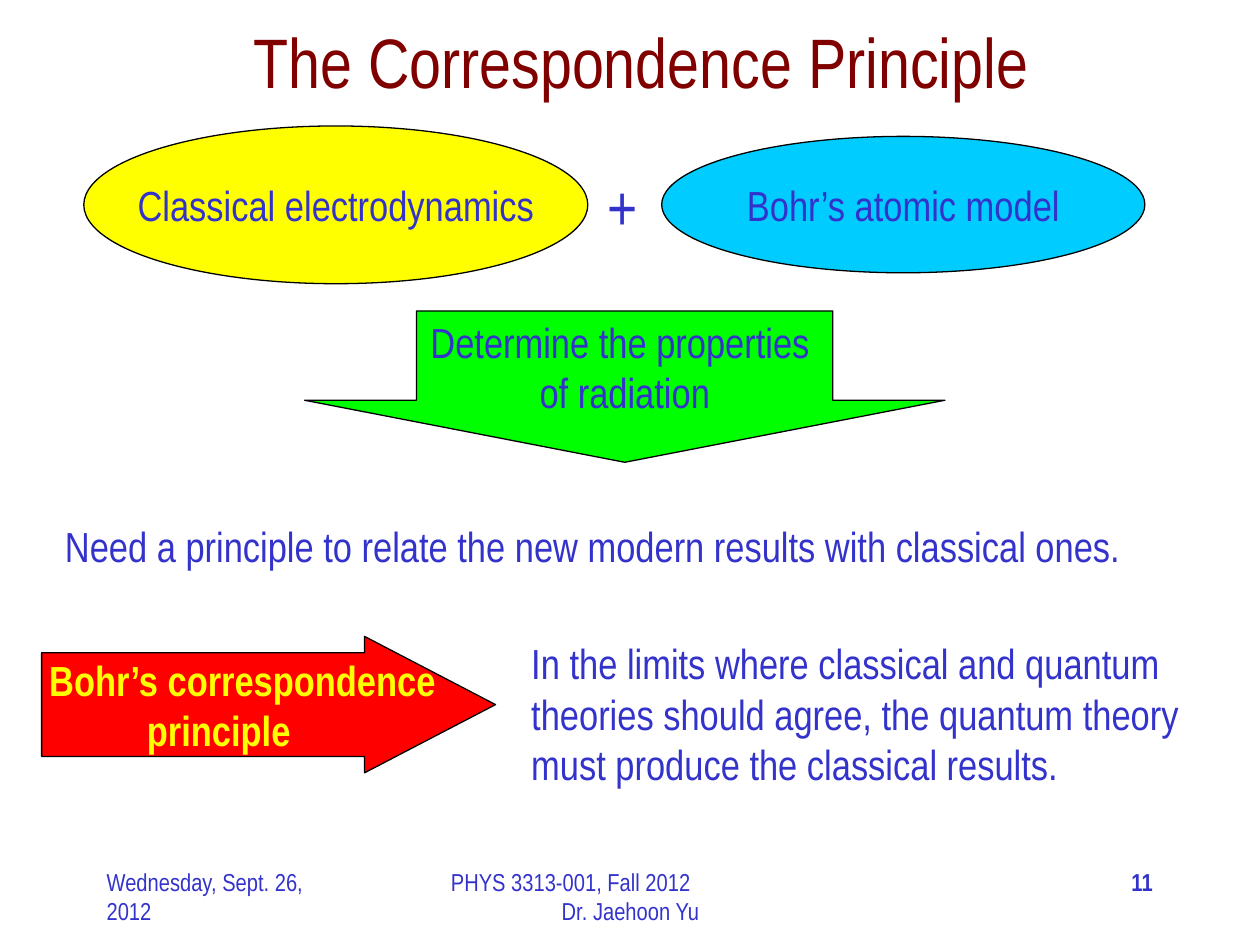
from dataclasses import dataclass

from pptx import Presentation
from pptx import util as u
from pptx.dml.color import RGBColor
from pptx.enum import shapes, text

FONT = "Arial Narrow"
BLUE, MAROON, YELLOW, BLACK = "3333CC", "800000", "FFFF00", "000000"
LEFT, CENTER, RIGHT = text.PP_ALIGN.LEFT, text.PP_ALIGN.CENTER, text.PP_ALIGN.RIGHT
TOP, MIDDLE = text.MSO_ANCHOR.TOP, text.MSO_ANCHOR.MIDDLE
SHAPE = shapes.MSO_SHAPE


@dataclass
class Line:
    words: str
    align: text.PP_ALIGN = LEFT
    indent: float = 0


@dataclass
class Style:
    size: float = 24
    color: str = BLUE
    bold: bool = False
    anchor: text.MSO_ANCHOR = TOP
    wrap: bool = True


@dataclass
class Box:
    """Position and size in centimetres."""
    left: float
    top: float
    width: float
    height: float

    def lengths(self) -> list[u.Length]:
        return [u.Cm(n) for n in (self.left, self.top, self.width, self.height)]


@dataclass
class Figure:
    kind: shapes.MSO_SHAPE
    box: Box
    fill: str
    lines: list[Line]
    style: Style
    adjustments: tuple[float, ...] = ()


@dataclass
class Note:
    box: Box
    lines: list[Line]
    style: Style


def rgb(value: str) -> RGBColor:
    return RGBColor.from_string(value)


def write(frame, lines: list[Line], style: Style) -> None:
    frame.auto_size = text.MSO_AUTO_SIZE.NONE
    frame.word_wrap = style.wrap
    frame.vertical_anchor = style.anchor
    frame.text = "\n".join(line.words for line in lines)
    for paragraph, line in zip(frame.paragraphs, lines):
        paragraph.alignment = line.align
        if line.indent:
            paragraph._p.get_or_add_pPr().set("marL", str(u.Cm(line.indent)))
        for run in paragraph.runs:
            run.font.name = FONT
            run.font.size = u.Pt(style.size)
            run.font.bold = style.bold
            run.font.color.rgb = rgb(style.color)


def draw_figure(slide, figure: Figure) -> None:
    shape = slide.shapes.add_shape(figure.kind, *figure.box.lengths())
    shape.shadow.inherit = False
    for index, value in enumerate(figure.adjustments):
        shape.adjustments[index] = value
    shape.fill.solid()
    shape.fill.fore_color.rgb = rgb(figure.fill)
    shape.line.color.rgb = rgb(BLACK)
    shape.line.width = u.Pt(0.75)
    write(shape.text_frame, figure.lines, figure.style)


def draw_note(slide, note: Note) -> None:
    box = slide.shapes.add_textbox(*note.box.lengths())
    write(box.text_frame, note.lines, note.style)


LABEL = Style(anchor=MIDDLE, wrap=False)
FOOTER = Style(size=14)
FOOTER_TOP, FOOTER_HEIGHT = 17.35, 1.27

FIGURES = [
    # The two theories
    Figure(SHAPE.OVAL, Box(1.69, 2.54, 10.16, 3.18), YELLOW,
           [Line("Classical electrodynamics", CENTER)], LABEL),
    Figure(SHAPE.OVAL, Box(13.34, 2.75, 9.74, 2.75), "00CCFF",
           [Line("Bohr’s atomic model", CENTER)], LABEL),
    # What they lead to
    Figure(SHAPE.DOWN_ARROW, Box(6.14, 6.27, 12.91, 3.05), "00FF00",
           [Line("Determine the properties ", CENTER), Line("of radiation", CENTER)],
           LABEL, (0.65, 0.41)),
    # The principle
    Figure(SHAPE.RIGHT_ARROW, Box(0.84, 12.83, 9.15, 2.75), "FF0000",
           [Line("Bohr’s correspondence ", CENTER, 1.15), Line("principle", CENTER)],
           Style(color=YELLOW, bold=True, anchor=MIDDLE, wrap=False), (0.76, 0.96)),
]

NOTES = [
    Note(Box(1.06, 10.37, 22.86, 2.69),
         [Line("Need a principle to relate the new modern results with classical ones.")],
         Style()),
    Note(Box(10.46, 12.73, 14.3, 3.33),
         [Line("In the limits where classical and quantum theories should agree, "
               "the quantum theory must produce the classical results.")],
         Style()),
    Note(Box(11.99, 3.25, 1.14, 1.8), [Line("+")], Style(size=36, wrap=False)),
    # Footer: date, page number, course
    Note(Box(1.9, FOOTER_TOP, 5.29, FOOTER_HEIGHT),
         [Line("Wednesday, Sept. 26, 2012")], FOOTER),
    Note(Box(18.2, FOOTER_TOP, 5.29, FOOTER_HEIGHT),
         [Line("11", RIGHT)], Style(size=14, bold=True)),
    Note(Box(8.69, FOOTER_TOP, 8.04, FOOTER_HEIGHT),
         [Line("PHYS 3313-001, Fall 2012", LEFT, 0.15), Line("Dr. Jaehoon Yu", CENTER)],
         FOOTER),
]


def main() -> None:
    deck = Presentation()
    deck.slide_width, deck.slide_height = u.Cm(25.4), u.Cm(19.05)
    slide = deck.slides.add_slide(deck.slide_layouts.get_by_name("Title Only"))

    # Title
    title = slide.shapes.title
    title.left, title.top, title.width, title.height = Box(1.27, 0.13, 23.29, 2.18).lengths()
    write(title.text_frame, [Line("The Correspondence Principle", CENTER)],
          Style(size=40, color=MAROON, anchor=MIDDLE))

    for figure in FIGURES:
        draw_figure(slide, figure)
    for note in NOTES:
        draw_note(slide, note)

    deck.save("out.pptx")


if __name__ == "__main__":
    main()
